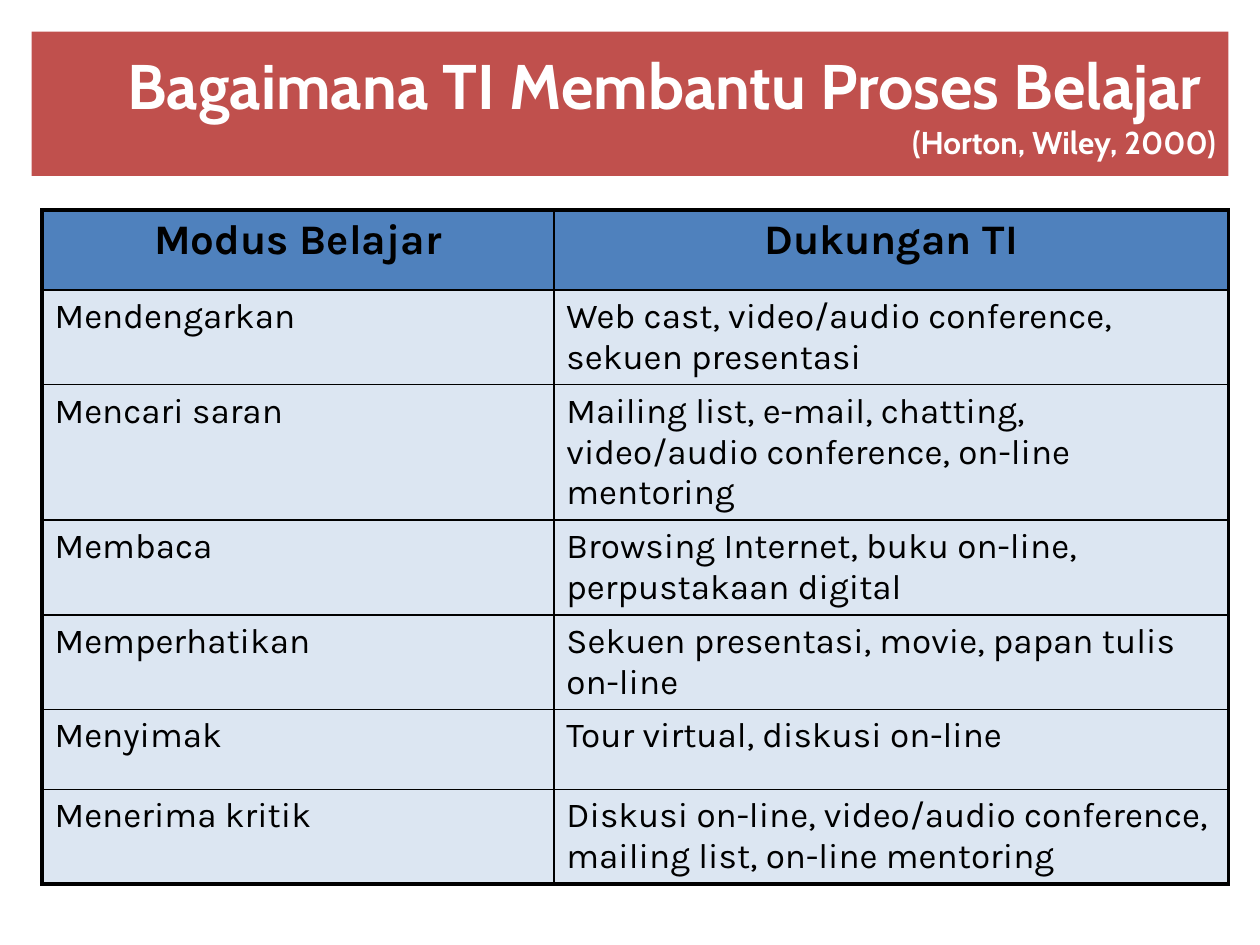
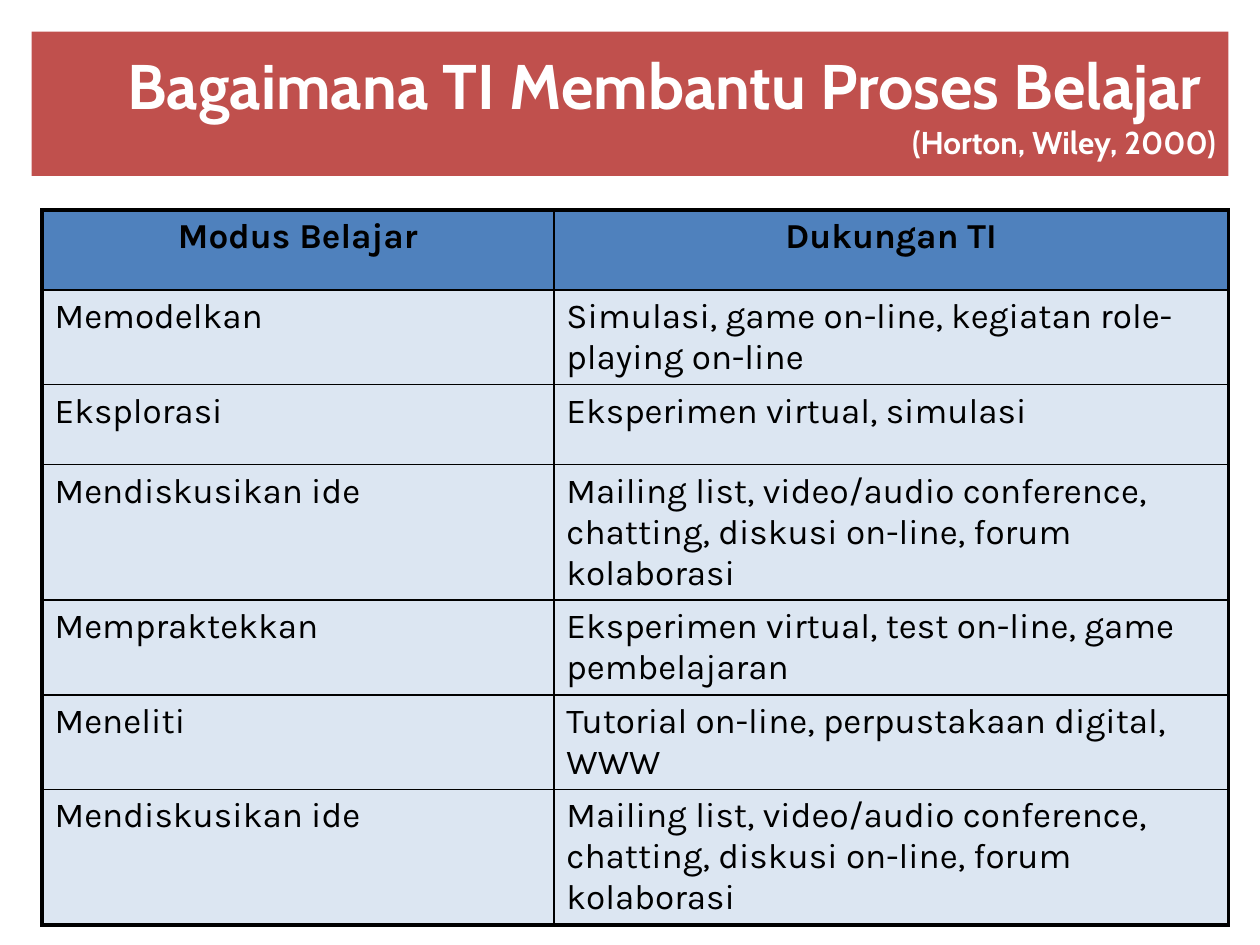
from dataclasses import dataclass

from lxml import etree
from pptx import Presentation
from pptx.dml.color import RGBColor
from pptx.enum.text import MSO_ANCHOR, MSO_AUTO_SIZE, PP_ALIGN
from pptx.oxml.ns import qn
from pptx.util import Emu, Pt

LEFT, CENTER, RIGHT = PP_ALIGN.LEFT, PP_ALIGN.CENTER, PP_ALIGN.RIGHT
MIDDLE = MSO_ANCHOR.MIDDLE
NO_AUTOFIT = MSO_AUTO_SIZE.NONE

EMU_PER_PX = 9525
TITLE_ONLY = 5

RED, BLUE, PALE_BLUE = "C0504D", "4F81BD", "DCE6F2"
BLACK, WHITE = "000000", "FFFFFF"
TITLE_FONT, BODY_FONT = "Cabin", "Karla"
TITLE_SIZE, SOURCE_SIZE, BODY_SIZE = 36, 18, 20

TITLE = "Bagaimana TI Membantu Proses Belajar "
SOURCE = "(Horton, Wiley, 2000)"
HEADINGS = ("Modus Belajar", "Dukungan TI")
COLUMN_WIDTHS = (390, 514)
ROW_HEIGHT = 61
OUTER_LINE, INNER_LINE = 2.25, 1


@dataclass(frozen=True)
class Box:
    left: int
    top: int
    width: int
    height: int


@dataclass(frozen=True)
class ModeTable:
    heading_size: int
    rows: tuple[tuple[str, str], ...]


TITLE_BOX = Box(24, 24, 912, 110)

MODE_TABLES = (
    ModeTable(24, (
        ("Mendengarkan", "Web cast, video/audio conference, sekuen presentasi"),
        ("Mencari saran", "Mailing list, e-mail, chatting, video/audio conference, on-line mentoring"),
        ("Membaca", "Browsing Internet, buku on-line, perpustakaan digital"),
        ("Memperhatikan", "Sekuen presentasi, movie, papan tulis on-line"),
        ("Menyimak", "Tour virtual, diskusi on-line"),
        ("Menerima kritik", "Diskusi on-line, video/audio conference, mailing list, on-line mentoring"),
    )),
    ModeTable(20, (
        ("Memodelkan", "Simulasi, game on-line, kegiatan role-playing on-line"),
        ("Eksplorasi", "Eksperimen virtual, simulasi"),
        ("Mendiskusikan ide", "Mailing list, video/audio conference, chatting, diskusi on-line, forum kolaborasi"),
        ("Mempraktekkan", "Eksperimen virtual, test on-line, game pembelajaran"),
        ("Meneliti", "Tutorial on-line, perpustakaan digital, WWW"),
        ("Mendiskusikan ide", "Mailing list, video/audio conference, chatting, diskusi on-line, forum kolaborasi"),
    )),
)


def px(length: int) -> Emu:
    return Emu(length * EMU_PER_PX)


def color(value: str) -> RGBColor:
    return RGBColor.from_string(value)


def paint(target, value: str) -> None:
    target.fill.solid()
    target.fill.fore_color.rgb = color(value)


def add_text(para, text: str, *, size: int, font: str, ink: str, bold: bool = False, align=LEFT) -> None:
    para.alignment = align
    span = para.add_run()
    span.text = text
    span.font.size = Pt(size)
    span.font.name = font
    span.font.bold = bold
    span.font.color.rgb = color(ink)


def add_break(para, size: int) -> None:
    para.add_line_break()
    line_break = para._p.findall(qn("a:br"))[-1]
    etree.SubElement(line_break, qn("a:rPr"), sz=str(size * 100))


def add_title(page) -> None:
    title = page.shapes.title
    title.left, title.top = px(TITLE_BOX.left), px(TITLE_BOX.top)
    title.width, title.height = px(TITLE_BOX.width), px(TITLE_BOX.height)
    paint(title, RED)
    frame = title.text_frame
    frame.word_wrap = True
    frame.auto_size = NO_AUTOFIT
    frame.vertical_anchor = MIDDLE
    para = frame.paragraphs[0]
    style = dict(font=TITLE_FONT, ink=WHITE, bold=True, align=RIGHT)
    add_text(para, TITLE, size=TITLE_SIZE, **style)
    add_break(para, TITLE_SIZE)
    add_text(para, SOURCE, size=SOURCE_SIZE, **style)


def add_borders(cell, outer: dict[str, bool]) -> None:
    properties = cell._tc.get_or_add_tcPr()
    for side, is_outer in outer.items():
        width = Pt(OUTER_LINE if is_outer else INNER_LINE)
        line = etree.SubElement(properties, qn(f"a:ln{side}"), w=str(int(width)))
        fill = etree.SubElement(line, qn("a:solidFill"))
        etree.SubElement(fill, qn("a:srgbClr"), val=BLACK)


def add_mode_table(page, modes: ModeTable) -> None:
    rows = (HEADINGS, *modes.rows)
    box = Box(32, 160, sum(COLUMN_WIDTHS), ROW_HEIGHT * len(rows))
    table = page.shapes.add_table(
        len(rows), len(COLUMN_WIDTHS), px(box.left), px(box.top), px(box.width), px(box.height)
    ).table
    table.first_row = False
    table.horz_banding = False
    for column, width in zip(table.columns, COLUMN_WIDTHS):
        column.width = px(width)
    for row_index, texts in enumerate(rows):
        table.rows[row_index].height = px(ROW_HEIGHT)
        heading = row_index == 0
        for column_index, text in enumerate(texts):
            cell = table.cell(row_index, column_index)
            add_borders(cell, {
                "L": column_index == 0,
                "R": column_index == len(texts) - 1,
                "T": heading,
                "B": row_index == len(rows) - 1,
            })
            paint(cell, BLUE if heading else PALE_BLUE)
            add_text(
                cell.text_frame.paragraphs[0], text,
                size=modes.heading_size if heading else BODY_SIZE,
                font=BODY_FONT, ink=BLACK, bold=heading,
                align=CENTER if heading else LEFT,
            )


def main() -> None:
    deck = Presentation()
    deck.slide_width, deck.slide_height = px(960), px(720)
    for modes in MODE_TABLES:
        page = deck.slides.add_slide(deck.slide_layouts[TITLE_ONLY])
        add_title(page)
        add_mode_table(page, modes)
    deck.save("out.pptx")


if __name__ == "__main__":
    main()
